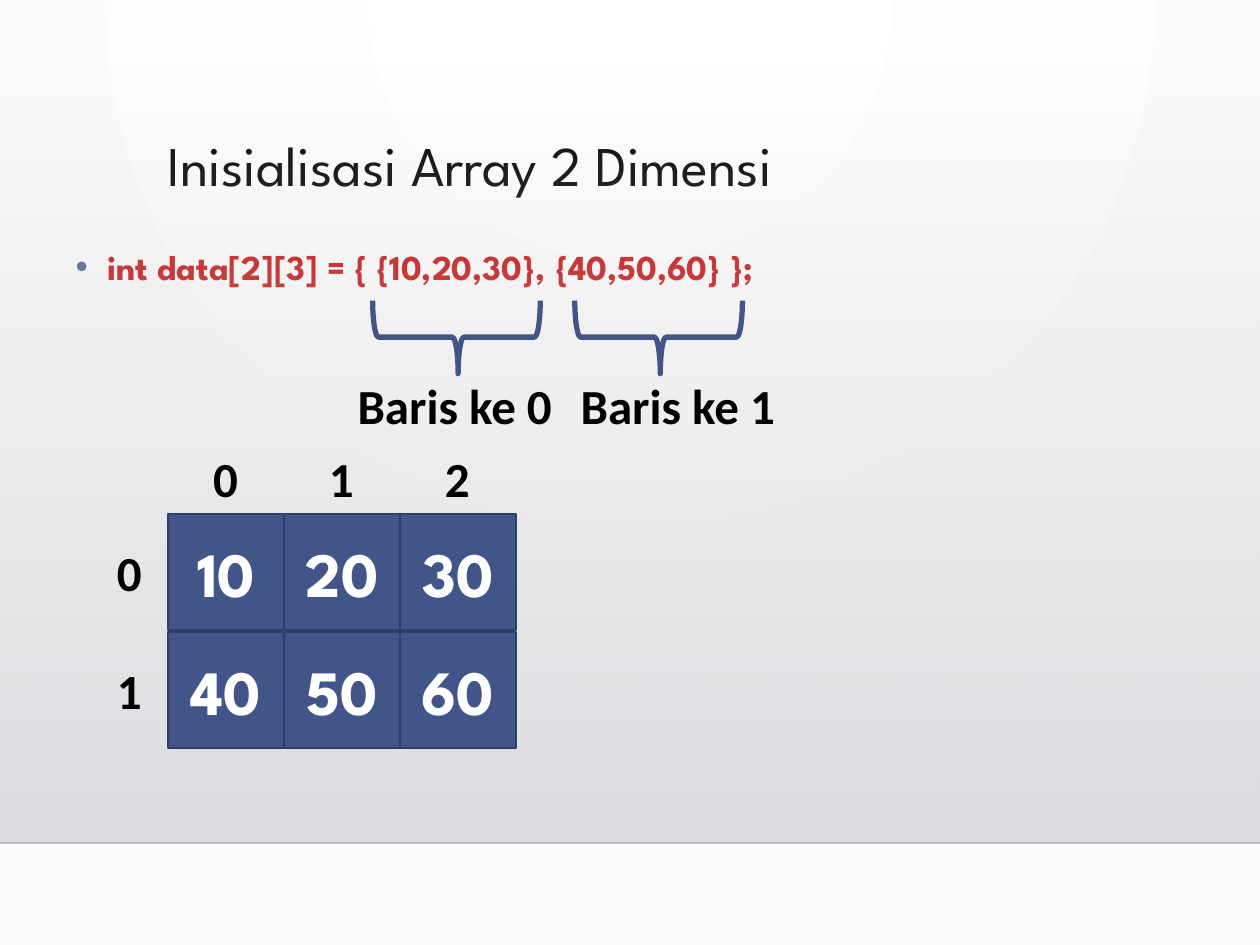
"""Build the slide on initialising a two-dimensional array."""
from lxml import etree
from pptx import Presentation
from pptx.dml.color import RGBColor
from pptx.enum.shapes import MSO_CONNECTOR, MSO_SHAPE
from pptx.enum.text import MSO_ANCHOR, MSO_AUTO_SIZE, PP_ALIGN
from pptx.oxml import parse_xml
from pptx.oxml.ns import nsdecls, qn
from pptx.util import Pt

RECT, BRACE = MSO_SHAPE.RECTANGLE, MSO_SHAPE.LEFT_BRACE
STRAIGHT = MSO_CONNECTOR.STRAIGHT
TOP, MIDDLE = MSO_ANCHOR.TOP, MSO_ANCHOR.MIDDLE
LEFT, CENTER = PP_ALIGN.LEFT, PP_ALIGN.CENTER
NO_AUTOFIT = MSO_AUTO_SIZE.NONE

HEADING_FONT, LABEL_FONT = "League Spartan", "Calibri"
BLUE, DARK_BLUE, RED = "415588", "303F65", "C00000"
BLACK, WHITE = "000000", "FFFFFF"
VALUES = [[10, 20, 30], [40, 50, 60]]
GRID_X, GRID_Y, CELL, ROW_STEP = 96, 293.75, 66.25, 67.5
LABEL_W, LABEL_H = 29, 41


def rgb(value):
    """Return the colour of a hex string."""
    return RGBColor.from_string(value)


def place(sp, x, y, w, h):
    """Move and size a shape in points."""
    sp.left, sp.top, sp.width, sp.height = Pt(x), Pt(y), Pt(w), Pt(h)


def add_run(p, text, size, font, color, bold=True):
    """Add one formatted run to a paragraph."""
    r = p.add_run()
    r.text = text
    r.font.size, r.font.name, r.font.bold = Pt(size), font, bold
    r.font.color.rgb = rgb(color)


def set_gradient(fill, parent, stops, direction):
    """Give a fill the (position, colour, opacity) stops and a direction."""
    fill.solid()
    marks = "".join(
        f'<a:gs pos="{pos * 1000}"><a:srgbClr val="{color}">'
        f'<a:alpha val="{alpha * 1000}"/></a:srgbClr></a:gs>'
        for pos, color, alpha in stops)
    grad = parse_xml(f'<a:gradFill {nsdecls("a")} rotWithShape="1">'
                     f"<a:gsLst>{marks}</a:gsLst>{direction}</a:gradFill>")
    parent.replace(parent.find(qn("a:solidFill")), grad)


def add_shape(s, kind, x, y, w, h):
    """Add a preset shape without shadow."""
    sp = s.shapes.add_shape(kind, Pt(x), Pt(y), Pt(w), Pt(h))
    sp.shadow.inherit = False
    return sp


def add_background(s):
    """Paint the round glow, the shaded panel and its lower edge."""
    bg_pr = s.background.fill
    bg_pr.solid()
    set_gradient(bg_pr, s.element.find(".//" + qn("p:bgPr")),
                 [(0, WHITE, 100), (100, "FAFAFA", 100)],
                 '<a:path path="circle"><a:fillToRect l="43000" t="0" '
                 'r="43000" b="100000"/></a:path>')
    sp = add_shape(s, RECT, 0, 0.51 * 72, 720, 445)
    sp.line.fill.background()
    set_gradient(sp.fill, sp.element.spPr,
                 [(0, "DCDCE0", 0), (100, "DEDEE2", 100)],
                 '<a:lin ang="5400000" scaled="0"/>')
    line = s.shapes.add_connector(STRAIGHT, 0, Pt(481.75), Pt(720), Pt(481.75))
    line.line.width = Pt(1)
    line.line.color.rgb = rgb("000001")
    color = line.element.spPr.find(".//" + qn("a:srgbClr"))
    etree.SubElement(color, qn("a:alpha"), val="20000")
    etree.SubElement(line.element.spPr, qn("a:effectLst"))


def fill_title(s, text):
    """Place and fill the title."""
    sp = s.shapes.title
    place(sp, 88.5, 75.5, 517.5, 83)
    tf = sp.text_frame
    tf.auto_size, tf.vertical_anchor = NO_AUTOFIT, TOP
    p = tf.paragraphs[0]
    p.alignment, p.line_spacing = LEFT, 0.9
    add_run(p, text, 32, HEADING_FONT, BLACK, False)


def fill_body(s, text):
    """Place the body and fill it with one bulleted line."""
    sp = s.placeholders[1]
    place(sp, 36, 132, 648, 356.5)
    tf = sp.text_frame
    tf.auto_size, tf.vertical_anchor = NO_AUTOFIT, TOP
    p = tf.paragraphs[0]
    p.line_spacing, p.space_before = 1.2, Pt(0)
    p_pr = p._p.get_or_add_pPr()
    p_pr.set("marL", str(Pt(18)))
    p_pr.set("indent", str(Pt(-18)))
    bu_clr = etree.SubElement(p_pr, qn("a:buClr"))
    etree.SubElement(bu_clr, qn("a:srgbClr"), val=BLUE)
    etree.SubElement(p_pr, qn("a:buFont"), typeface="Arial")
    etree.SubElement(p_pr, qn("a:buChar"), char="•")
    add_run(p, text, 20, HEADING_FONT, RED)


def add_label(s, text, x, y, w=LABEL_W):
    """Add a bold label that does not wrap."""
    sp = s.shapes.add_textbox(Pt(x), Pt(y), Pt(w), Pt(LABEL_H))
    tf = sp.text_frame
    tf.word_wrap = False
    add_run(tf.paragraphs[0], text, 28, LABEL_FONT, BLACK)


def add_brace(s, x):
    """Add a brace that opens upwards."""
    sp = add_shape(s, BRACE, x, 144.75, 41.75, 95.75)
    sp.rotation = 270
    sp.adjustments[0], sp.adjustments[1] = 0.08, 0.51
    sp.fill.background()
    sp.line.color.rgb, sp.line.width = rgb(BLUE), Pt(3)


def add_cell(s, value, x, y):
    """Add one array cell with its value."""
    sp = add_shape(s, RECT, x, y, CELL, CELL)
    sp.fill.solid()
    sp.fill.fore_color.rgb = rgb(BLUE)
    sp.line.color.rgb, sp.line.width = rgb(DARK_BLUE), Pt(1.25)
    tf = sp.text_frame
    tf.vertical_anchor = MIDDLE
    p = tf.paragraphs[0]
    p.alignment = CENTER
    add_run(p, str(value), 36, HEADING_FONT, WHITE)


def add_array(s):
    """Draw the cells with their row and column indexes."""
    for row, values in enumerate(VALUES):
        y = GRID_Y + row * ROW_STEP
        add_label(s, str(row), 59.75, y + (CELL - LABEL_H) / 2)
        for col, value in enumerate(values):
            add_cell(s, value, GRID_X + col * CELL, y)
    for col in range(len(VALUES[0])):
        x = GRID_X + col * CELL + (CELL - LABEL_W) / 2
        add_label(s, str(col), x, 252.5)


def main():
    """Build and save the slide."""
    prs = Presentation()
    prs.slide_width, prs.slide_height = Pt(720), Pt(540)
    s = prs.slides.add_slide(prs.slide_layouts[1])
    add_background(s)
    fill_title(s, "Inisialisasi Array 2 Dimensi")
    fill_body(s, "int data[2][3] = { {10,20,30}, {40,50,60} };")
    for row, (brace_x, label_x) in enumerate([(240, 197.25), (355.5, 324.75)]):
        add_brace(s, brace_x)
        add_label(s, f"Baris ke {row}", label_x, 211.25, 127.5)
    add_array(s)
    prs.save("out.pptx")


if __name__ == "__main__":
    main()
